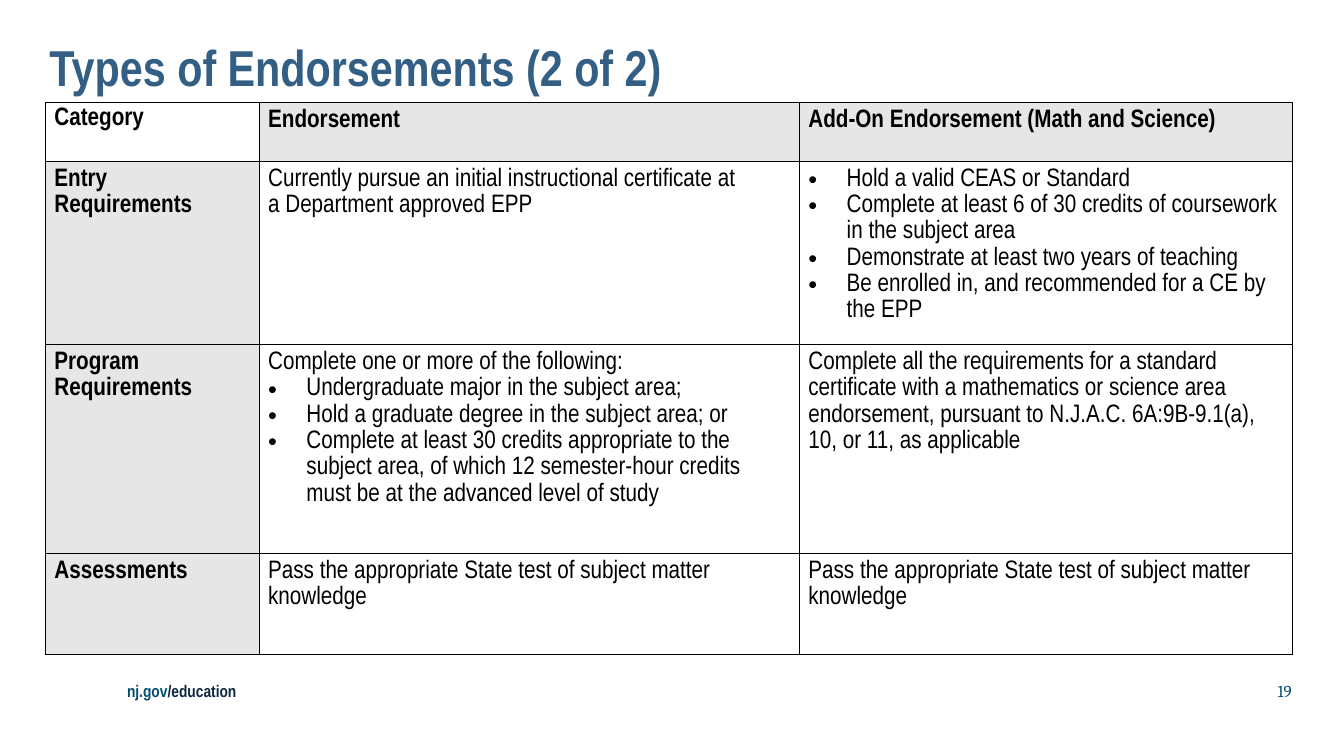
"""Build the slide that compares the two types of endorsements."""
from dataclasses import dataclass

from lxml import etree
from pptx import Presentation
from pptx.dml.color import RGBColor
from pptx.enum.text import MSO_ANCHOR, MSO_AUTO_SIZE, PP_ALIGN
from pptx.oxml.ns import qn
from pptx.util import Inches, Pt

LEFT, RIGHT = PP_ALIGN.LEFT, PP_ALIGN.RIGHT
TOP, MIDDLE = MSO_ANCHOR.TOP, MSO_ANCHOR.MIDDLE
NO_AUTOFIT, GROW = MSO_AUTO_SIZE.NONE, MSO_AUTO_SIZE.SHAPE_TO_FIT_TEXT

BLACK = RGBColor(0x00, 0x00, 0x00)
GREY = RGBColor(0xE7, 0xE6, 0xE6)
TITLE_BLUE = RGBColor(0x34, 0x5F, 0x84)
TEAL = RGBColor(0x00, 0x4E, 0x75)
NAVY = RGBColor(0x0E, 0x28, 0x41)

NARROW, SERIF = "Arial Narrow", "Cambria"
SLIDE_WIDTH, SLIDE_HEIGHT = Inches(13.33), Inches(7.5)
LINE_PITCH = Pt(18.8)
BULLET_INDENT = Inches(0.38)
BORDER_WIDTH = Pt(0.85)
NBSP = chr(160)


@dataclass(frozen=True)
class Area:
    """A rectangle in percent of the slide's width and height."""
    left: float
    top: float
    width: float
    height: float


@dataclass(frozen=True)
class Span:
    """A piece of footer text with its look."""
    text: str
    font: str
    color: RGBColor
    bold: bool = False


@dataclass(frozen=True)
class Footer:
    """A one-line text at the bottom of the slide."""
    area: Area
    align: PP_ALIGN
    spans: tuple[Span, ...]


@dataclass(frozen=True)
class Entry:
    """The plain lines and the bulleted lines of a table cell."""
    lines: tuple[str, ...] = ()
    bullets: tuple[str, ...] = ()


TITLE_AREA = Area(3.68, 5.73, 92.5, 6.13)
TABLE_AREA = Area(3.38, 13.6, 92.78, 72.93)
COLUMN_SHARES = (15.9, 40.2, 36.68)
ROW_SHARES = (7.73, 24.27, 27.6, 13.33)

FOOTERS = (
    Footer(Area(9.45, 90, 42.16, 2.67), LEFT,
           (Span("nj.gov", NARROW, TEAL, True), Span("/education", NARROW, NAVY, True))),
    Footer(Area(53.94, 90, 42.16, 2.67), RIGHT, (Span("19", SERIF, TEAL),)),
)

STATE_TEST = Entry(("Pass the appropriate State test of subject matter knowledge",))
ENTRIES = (
    (Entry(("Category",)), Entry(("Endorsement",)),
     Entry(("Add-On Endorsement (Math and Science)",))),
    (Entry(("Entry", "Requirements")),
     Entry(("Currently pursue an initial instructional certificate at "
            f"a{NBSP}Department{NBSP}approved{NBSP}EPP",)),
     Entry(bullets=("Hold a valid CEAS or Standard",
                    "Complete at least 6 of 30 credits of coursework in the subject area",
                    "Demonstrate at least two years of teaching",
                    "Be enrolled in, and recommended for a CE by the EPP"))),
    (Entry(("Program", "Requirements")),
     Entry(("Complete one or more of the following:",),
           ("Undergraduate major in the subject area;",
            "Hold a graduate degree in the subject area; or",
            "Complete at least 30 credits appropriate to the subject area, of which "
            "12 semester-hour credits must be at the advanced level of study")),
     Entry(("Complete all the requirements for a standard certificate with a mathematics "
            "or science area endorsement, pursuant to N.J.A.C. 6A:9B-9.1(a), "
            f"10,{NBSP}or{NBSP}11, as applicable",))),
    (Entry(("Assessments",)), STATE_TEST, STATE_TEST),
)


def across(share: float) -> int:
    """Turn a percentage of the slide's width into a length."""
    return round(SLIDE_WIDTH * share / 100)


def down(share: float) -> int:
    """Turn a percentage of the slide's height into a length."""
    return round(SLIDE_HEIGHT * share / 100)


def bounds(area: Area) -> tuple[int, int, int, int]:
    """Give the left, top, width and height of an area."""
    return across(area.left), down(area.top), across(area.width), down(area.height)


def style(font, name: str, size: float, color: RGBColor, bold: bool) -> None:
    """Set the look of a font."""
    font.name, font.size, font.bold = name, Pt(size), bold
    font.color.rgb = color


def set_frame(frame, anchor: MSO_ANCHOR, fit: MSO_AUTO_SIZE) -> None:
    """Make a text frame wrap without inner margins."""
    frame.margin_left = frame.margin_right = frame.margin_top = frame.margin_bottom = 0
    frame.word_wrap, frame.vertical_anchor, frame.auto_size = True, anchor, fit


def add_title(slide, text: str) -> None:
    """Place and format the title placeholder."""
    title = slide.shapes.title
    title.left, title.top, title.width, title.height = bounds(TITLE_AREA)
    set_frame(title.text_frame, TOP, NO_AUTOFIT)
    title.text_frame.text = text
    para = title.text_frame.paragraphs[0]
    para.alignment, para.line_spacing = LEFT, 0.9
    style(para.runs[0].font, NARROW, 36, TITLE_BLUE, True)


def add_footer(slide, footer: Footer) -> None:
    """Draw a footer line from its spans."""
    box = slide.shapes.add_textbox(*bounds(footer.area))
    set_frame(box.text_frame, MIDDLE, GROW)
    para = box.text_frame.paragraphs[0]
    para.alignment = footer.align
    for span in footer.spans:
        run = para.add_run()
        run.text = span.text
        style(run.font, span.font, 12, span.color, span.bold)


def add_bullet(para) -> None:
    """Give a paragraph a hanging round bullet."""
    properties = para._p.get_or_add_pPr()
    properties.set("marL", str(BULLET_INDENT))
    properties.set("indent", str(-BULLET_INDENT))
    etree.SubElement(properties, qn("a:buFont")).set("typeface", "Arial")
    etree.SubElement(properties, qn("a:buChar")).set("char", "•")


def add_borders(cell) -> None:
    """Draw a thin black line on each side of a cell."""
    properties = cell._tc.get_or_add_tcPr()
    for side in ("a:lnL", "a:lnR", "a:lnT", "a:lnB"):
        line = etree.SubElement(properties, qn(side), w=str(BORDER_WIDTH))
        fill = etree.SubElement(line, qn("a:solidFill"))
        etree.SubElement(fill, qn("a:srgbClr")).set("val", str(BLACK))


def fill_cell(cell, entry: Entry, is_heading: bool, is_corner: bool) -> None:
    """Write and format one table cell."""
    add_borders(cell)
    cell.margin_left = cell.margin_right = Inches(0.09)
    cell.margin_top = cell.margin_bottom = Inches(0.04)
    if is_heading and not is_corner:
        cell.fill.solid()
        cell.fill.fore_color.rgb = GREY
    else:
        cell.fill.background()
    cell.text_frame.text = "\n".join(entry.lines + entry.bullets)
    for index, para in enumerate(cell.text_frame.paragraphs):
        if index >= len(entry.lines):
            add_bullet(para)
        if not is_corner:
            para.line_spacing = LINE_PITCH
        style(para.runs[0].font, NARROW, 18, BLACK, is_heading)


def add_requirements(slide) -> None:
    """Draw the table of requirements."""
    frame = slide.shapes.add_table(len(ROW_SHARES), len(COLUMN_SHARES), *bounds(TABLE_AREA))
    table = frame.table
    table.first_row = table.horz_banding = False
    for column, share in zip(table.columns, COLUMN_SHARES):
        column.width = across(share)
    for row, share in zip(table.rows, ROW_SHARES):
        row.height = down(share)
    for r, entries in enumerate(ENTRIES):
        for c, entry in enumerate(entries):
            fill_cell(table.cell(r, c), entry, r == 0 or c == 0, r == c == 0)


def main() -> None:
    """Build and save the deck."""
    deck = Presentation()
    deck.slide_width, deck.slide_height = SLIDE_WIDTH, SLIDE_HEIGHT
    slide = deck.slides.add_slide(deck.slide_layouts[5])
    for footer in FOOTERS:
        add_footer(slide, footer)
    add_title(slide, "Types of Endorsements (2 of 2)")
    add_requirements(slide)
    deck.save("out.pptx")


if __name__ == "__main__":
    main()
